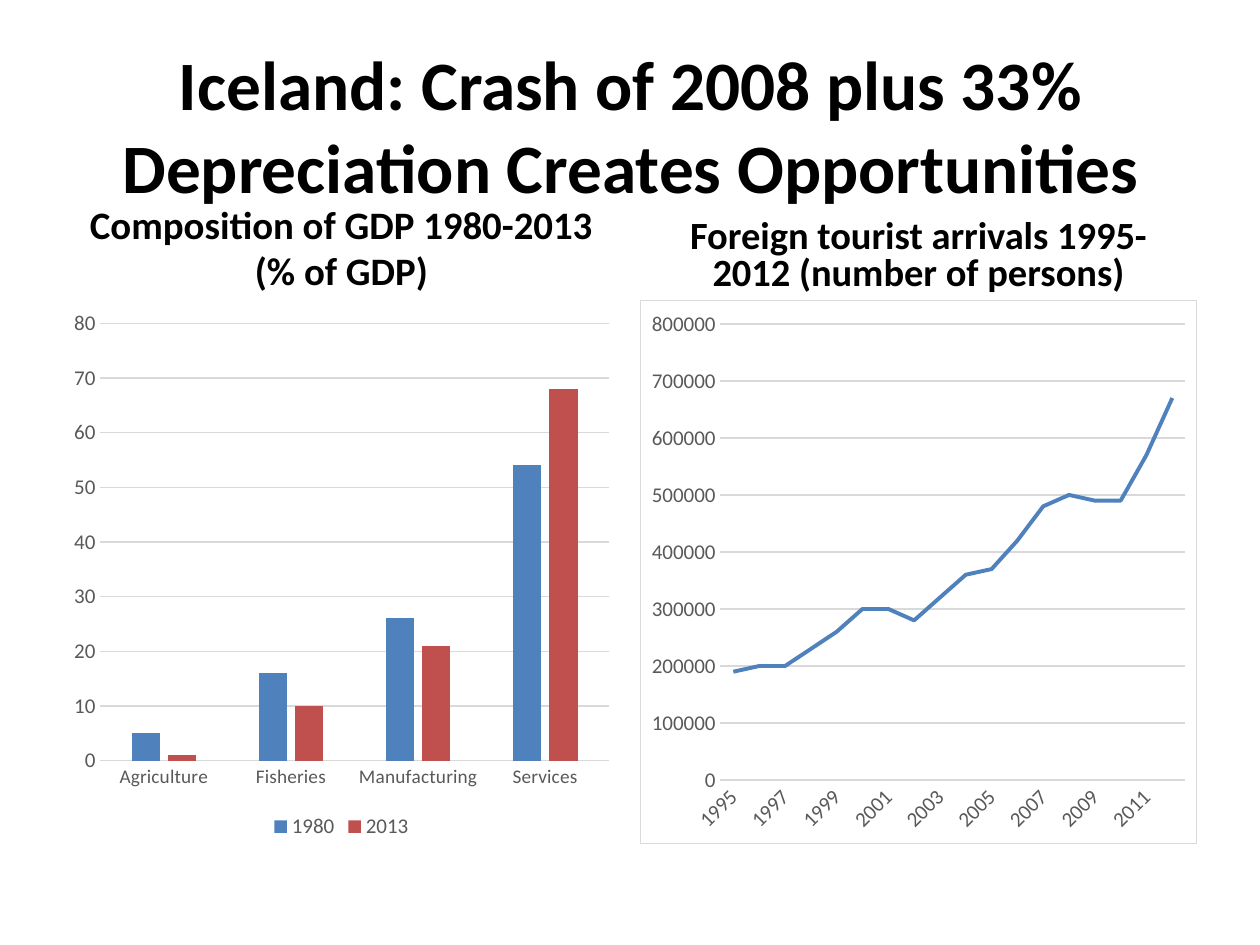
from lxml import etree
from pptx import Presentation
from pptx.chart.data import CategoryChartData
from pptx.dml.color import RGBColor
from pptx.enum.chart import XL_CHART_TYPE, XL_LEGEND_POSITION, XL_TICK_MARK
from pptx.enum.text import MSO_ANCHOR, PP_ALIGN
from pptx.oxml import parse_xml
from pptx.oxml.ns import nsdecls
from pptx.util import Pt

COLORS = {"black": "000000", "label": "595959", "grid": "D9D9D9",
          "blue": "4F81BD", "red": "C0504D"}
FONT = "Calibri"
LEFT, RIGHT, COLUMN_WIDTH = 36, 365.75, 318.25


def color(name):
    return RGBColor.from_string(COLORS[name])


def style_font(font, size, color_name, bold=False):
    formats = {"name": FONT, "size": Pt(size), "bold": bold}
    for key, value in formats.items():
        setattr(font, key, value)
    font.color.rgb = color(color_name)


deck = Presentation()
deck.slide_width, deck.slide_height = Pt(720), Pt(540)
page = deck.slides.add_slide(deck.slide_layouts[6])

# Title and chart headings: text, left, top, width, height, size, spacing, anchor
texts = [
    ("Iceland: Crash of 2008 plus 33% Depreciation Creates Opportunities",
     36.5, 26, 648, 90, 39.6, 1.0, MSO_ANCHOR.MIDDLE),
    ("Composition of GDP 1980-2013 (% of GDP)",
     LEFT, 121, COLUMN_WIDTH, 50.4, 22.2, 1.0, MSO_ANCHOR.BOTTOM),
    ("Foreign tourist arrivals 1995-2012 (number of persons)",
     RIGHT, 121, COLUMN_WIDTH, 50.4, 22, 0.8, MSO_ANCHOR.BOTTOM),
]
for text, left, top, width, height, size, spacing, anchor in texts:
    box = page.shapes.add_textbox(Pt(left), Pt(top), Pt(width), Pt(height))
    frame = box.text_frame
    frame.word_wrap = True
    frame.vertical_anchor = anchor
    para = frame.paragraphs[0]
    para.alignment = PP_ALIGN.CENTER
    para.line_spacing = spacing
    span = para.add_run()
    span.text = text
    style_font(span.font, size, "black", bold=True)

# Chart data
gdp = CategoryChartData()
gdp.categories = ["Agriculture", "Fisheries", "Manufacturing", "Services"]
gdp.add_series("1980", (5, 16, 26, 54))
gdp.add_series("2013", (1, 10, 21, 68))

arrivals = CategoryChartData()
arrivals.categories = [str(year) for year in range(1995, 2013)]
thousands = (190, 200, 200, 230, 260, 300, 300, 280, 320,
             360, 370, 420, 480, 500, 490, 490, 570, 670)
arrivals.add_series("Series 1", [count * 1000 for count in thousands])

# Charts: type, data, left, category label size, axis maximum, axis step
charts = []
for kind, data, left, label_size, maximum, step in [
    (XL_CHART_TYPE.LINE, arrivals, RIGHT, 12, 800000, 100000),
    (XL_CHART_TYPE.COLUMN_CLUSTERED, gdp, LEFT, 11, 80, 10),
]:
    chart = page.shapes.add_chart(kind, Pt(left), Pt(171.4), Pt(COLUMN_WIDTH),
                                  Pt(311), data).chart
    charts.append(chart)
    style_font(chart.font, 10, "black")
    chart.has_title = False
    chart.has_legend = False
    chart.plots[0].vary_by_categories = False

    category_axis, value_axis = chart.category_axis, chart.value_axis
    for axis, size in ((category_axis, label_size), (value_axis, 12)):
        axis.major_tick_mark = axis.minor_tick_mark = XL_TICK_MARK.NONE
        style_font(axis.tick_labels.font, size, "label")
    limits = {"minimum_scale": 0, "maximum_scale": maximum, "major_unit": step,
              "has_major_gridlines": True}
    for key, value in limits.items():
        setattr(value_axis, key, value)
    value_axis.format.line.fill.background()
    for line in (category_axis.format.line, value_axis.major_gridlines.format.line):
        line.color.rgb = color("grid")
        line.width = Pt(0.75)
line_chart, column_chart = charts

# Tourist arrivals: line, slanted years and thin frame
series = line_chart.plots[0].series[0]
series.smooth = False
series.format.line.color.rgb = color("blue")
series.format.line.width = Pt(2.25)
labels = line_chart.category_axis.tick_labels.font
category_text = line_chart.category_axis._element.find("{*}txPr/{*}bodyPr")
category_text.set("rot", "-2700000")
category_text.set("vert", "horz")

# GDP composition: paired columns with a legend below
columns = column_chart.plots[0]
columns.gap_width, columns.overlap = 219, -27
for series, name in zip(columns.series, ("blue", "red")):
    series.format.fill.solid()
    series.format.fill.fore_color.rgb = color(name)
column_chart.has_legend = True
legend = column_chart.legend
legend.position = XL_LEGEND_POSITION.BOTTOM
legend.include_in_layout = False
style_font(legend.font, 12, "label")

# Outer frames: grey around the line chart, none around the columns
grey = f'<a:solidFill><a:srgbClr val="{COLORS["grid"]}"/></a:solidFill>'
for chart, stroke in ((line_chart, grey), (column_chart, "<a:noFill/>")):
    frame = parse_xml(f'<c:spPr {nsdecls("c", "a")}><a:noFill/>'
                      f'<a:ln w="{Pt(0.75)}">{stroke}</a:ln></c:spPr>')
    chart._chartSpace.find("{*}chart").addnext(frame)

deck.save("out.pptx")
